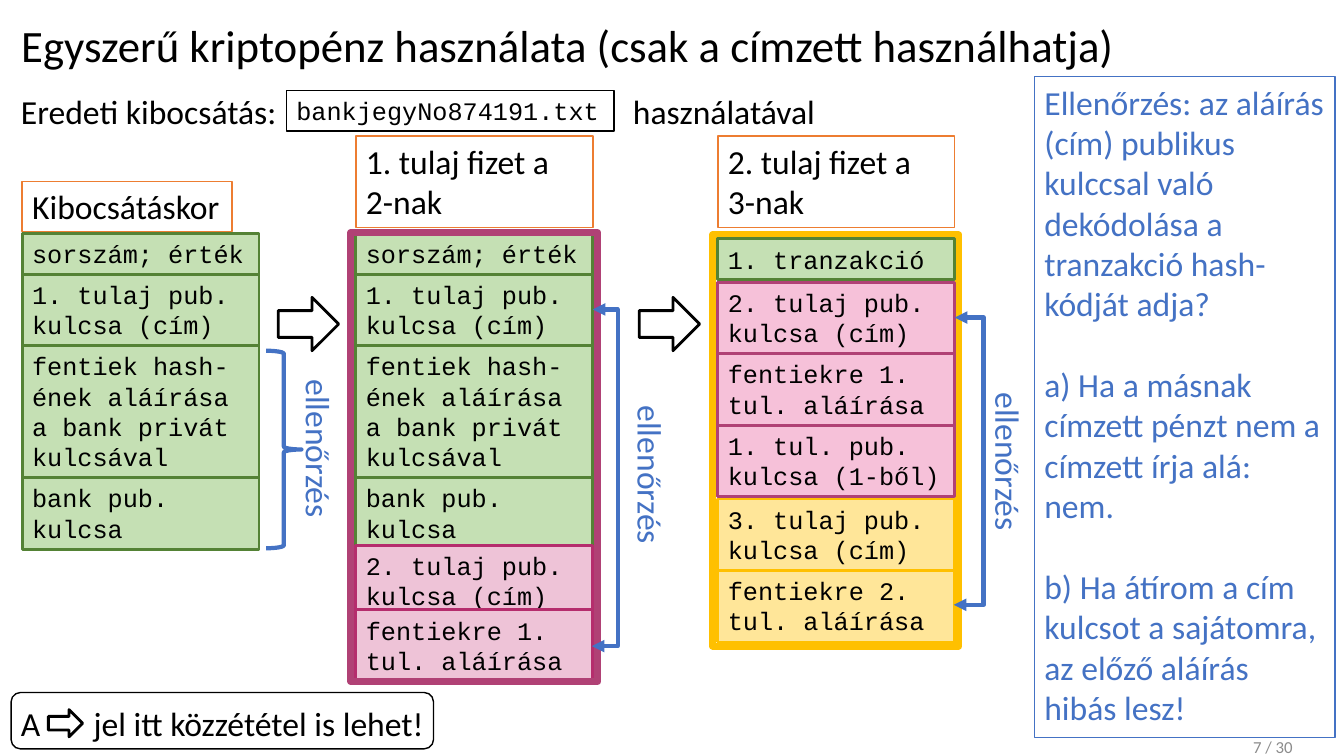
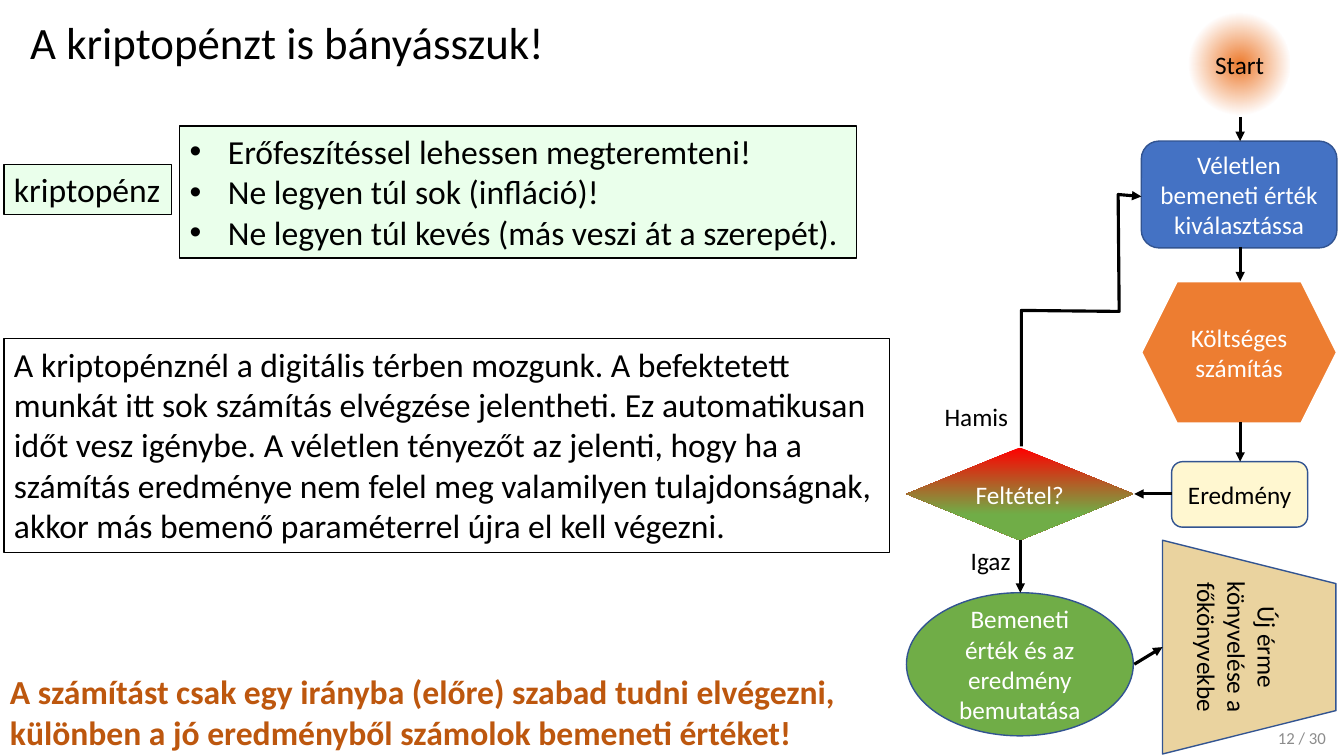
import pptx
import pptx.util
import pptx.dml.color
import pptx.enum.shapes
import pptx.enum.text
import pptx.oxml
import pptx.oxml.ns

Inches = pptx.util.Inches
Pt = pptx.util.Pt
qn = pptx.oxml.ns.qn
SHAPE = pptx.enum.shapes.MSO_SHAPE
CONNECTOR = pptx.enum.shapes.MSO_CONNECTOR
ANCHOR = pptx.enum.text.MSO_ANCHOR
ALIGN = pptx.enum.text.PP_ALIGN

COLORS = {
    "black": "000000", "white": "FFFFFF", "grey": "8C8C8C", "blue": "4472C4",
    "navy": "325491", "orange": "ED7D31", "rust": "BD570E", "red": "FF0000",
    "green": "70AD47", "mint": "BCFFBD", "sand": "D7A841", "cream": "FFF7D0",
    "leaf": "C5E0B4", "leaf_line": "548235", "rose": "EEC3D7", "rose_line": "B52D6D",
    "pink": "F6C1D9", "plum": "B04175", "yellow": "FFE699", "gold": "FFC000",
}


class Deck:
    font, mono = "Calibri", "Courier New"
    title_size, text_size, small_size, page_size = 32, 24, 18, 12

    def __init__(self):
        self.prs = pptx.Presentation()
        self.prs.slide_width, self.prs.slide_height = Inches(13.33), Inches(7.5)

    def slide(self, title, left, top, page, page_left, page_top, layout=5):
        self.s = self.prs.slides.add_slide(self.prs.slide_layouts[layout])
        sp = self.s.shapes.title
        self.place(sp, left, top, 11.98, 0.64)
        self.put_text(sp, [title], size=self.title_size)
        self.text(page_left, page_top, 3, 0.4, page, size=self.page_size, color="grey",
                  align=ALIGN.RIGHT, anchor=ANCHOR.MIDDLE)

    def place(self, sp, x, y, w, h):
        sp.left, sp.top, sp.width, sp.height = map(Inches, (x, y, w, h))

    def color(self, name):
        return pptx.dml.color.RGBColor.from_string(COLORS[name])

    def put_text(self, sp, lines, size=text_size, color="black", font=None, bold=False,
                 align=ALIGN.LEFT, anchor=ANCHOR.TOP, wrap=True, gap=0):
        tf = sp.text_frame
        tf.word_wrap = wrap
        tf.auto_size = pptx.enum.text.MSO_AUTO_SIZE.NONE
        tf.vertical_anchor = anchor
        for i, line in enumerate(lines):
            p = tf.add_paragraph() if i else tf.paragraphs[0]
            p.alignment = align
            p.space_before = Pt(gap if i else 0)
            r = p.add_run()
            r.text = line
            r.font.name = font or self.font
            r.font.size = Pt(size)
            r.font.bold = bold
            r.font.color.rgb = self.color(color)

    def text(self, x, y, w, h, words, rotation=0, **style):
        sp = self.s.shapes.add_textbox(*map(Inches, (x, y, w, h)))
        sp.rotation = rotation
        self.put_text(sp, [words], **style)

    def paint(self, sp, fill=None, line=None, width=1, alpha=None):
        if fill:
            sp.fill.solid()
            sp.fill.fore_color.rgb = self.color(fill)
            if alpha:
                clr = sp._element.spPr.find(qn("a:solidFill"))[0]
                clr.append(clr.makeelement(qn("a:alpha"), {"val": str(alpha * 1000)}))
        else:
            sp.fill.background()
        if line:
            sp.line.color.rgb = self.color(line)
            sp.line.width = Pt(width)
        else:
            sp.line.fill.background()

    def shape(self, kind, x, y, w, h, lines=(), fill=None, line=None, width=1,
              alpha=None, rotation=0, **style):
        sp = self.s.shapes.add_shape(kind, *map(Inches, (x, y, w, h)))
        sp.shadow.inherit = False
        sp.rotation = rotation
        self.paint(sp, fill, line, width, alpha)
        self.put_text(sp, lines, **style)
        return sp

    def box(self, x, y, w, h, *lines, **style):
        return self.shape(SHAPE.RECTANGLE, x, y, w, h, lines, **style)

    def node(self, kind, x, y, w, h, words, **style):
        return self.shape(kind, x, y, w, h, [words], size=self.small_size,
                          align=ALIGN.CENTER, anchor=ANCHOR.MIDDLE, **style)

    def gradient(self, sp, stops, direction):
        gs = "".join(f'<a:gs pos="{pos * 1000}"><a:srgbClr val="{COLORS[name]}"/></a:gs>'
                     for pos, name in stops)
        grad = pptx.oxml.parse_xml(
            f'<a:gradFill {pptx.oxml.ns.nsdecls("a")} rotWithShape="1">'
            f"<a:gsLst>{gs}</a:gsLst>{direction}</a:gradFill>")
        spPr = sp._element.spPr
        spPr.replace(spPr.find(qn("a:noFill")), grad)

    def stack(self, x, y, fill, line, rows, overlap=0):
        for count, words in rows:
            h = round(0.1 + 0.303 * count, 2)
            self.box(x, y, 2.35, h, words, fill=fill, line=line, width=2,
                     size=self.small_size, font=self.mono)
            y += h - overlap

    def bullets(self, x, y, w, h, lines, **look):
        sp = self.s.placeholders[1]
        self.place(sp, x, y, w, h)
        self.paint(sp, **look)
        self.put_text(sp, lines)
        for p in sp.text_frame.paragraphs:
            pPr = p._p.get_or_add_pPr()
            pPr.set("marL", str(Inches(0.38)))
            pPr.set("indent", str(-Inches(0.38)))

    def heads(self, sp, color, width, ends=("tailEnd",)):
        sp.line.color.rgb = self.color(color)
        sp.line.width = Pt(width)
        ln = sp.line._get_or_add_ln()
        for end in ends:
            ln.append(ln.makeelement(qn("a:" + end), {"type": "triangle"}))

    def connector(self, kind, x1, y1, x2, y2, color="black", width=2.25, **ends):
        c = self.s.shapes.add_connector(kind, *map(Inches, (x1, y1, x2, y2)))
        self.heads(c, color, width, **ends)
        spPr = c._element.spPr
        spPr.append(spPr.makeelement(qn("a:effectLst"), {}))
        return c

    def arrow(self, x1, y1, x2, y2):
        self.connector(CONNECTOR.STRAIGHT, x1, y1, x2, y2)

    def check_link(self, x, y1, y2, reach):
        step = 0.01
        c = self.connector(CONNECTOR.ELBOW, x, y1, x - step, y2, "blue", 3,
                           ends=("headEnd", "tailEnd"))
        geom = c._element.spPr.find(qn("a:prstGeom"))
        av = geom.find(qn("a:avLst"))
        if av is None:
            av = geom.makeelement(qn("a:avLst"), {})
            geom.append(av)
        value = round(-reach / step * 100000)
        av.append(av.makeelement(qn("a:gd"), {"name": "adj1", "fmla": f"val {value}"}))

    def bent_arrow(self, points):
        pts = [(Inches(x), Inches(y)) for x, y in points]
        fb = self.s.shapes.build_freeform(*pts[0])
        fb.add_line_segments(pts[1:], close=False)
        sp = fb.convert_to_shape()
        sp.shadow.inherit = False
        sp.fill.background()
        self.heads(sp, "black", 2.25)


def usage_slide(d):
    d.slide("Egyszerű kriptopénz használata (csak a címzett használhatja)", 0.11, 0.13,
            "7 / 30", 9.92, 7.21)
    x1, x2, x3 = 0.22, 3.53, 7.12
    d.text(0.11, 0.85, 2.84, 0.5, "Eredeti kibocsátás:", wrap=False)
    d.box(2.84, 0.9, 3.25, 0.4, "bankjegyNo874191.txt", fill="white", line="black",
          size=d.small_size, font=d.mono, wrap=False)
    d.text(6.18, 0.85, 2.03, 0.5, "használatával", wrap=False)

    d.box(x1, 1.8, 2.08, 0.5, "Kibocsátáskor", fill="white", line="orange", wrap=False)
    for x, words in ((x2, "1. tulaj fizet a 2-nak"), (x3, "2. tulaj fizet a 3-nak")):
        d.box(x, 1.35, 2.35, 0.91, words, fill="white", line="orange")

    issue = [(1, "sorszám; érték"), (2, "1. tulaj pub. kulcsa (cím)"),
             (4, "fentiek hash-ének aláírása a bank privát kulcsával"),
             (2, "bank pub. kulcsa")]
    second_key = (2, "2. tulaj pub. kulcsa (cím)")
    first_signature = (2, "fentiekre 1. tul. aláírása")
    for x in (x1, x2):
        d.stack(x, 2.32, "leaf", "leaf_line", issue)
    d.stack(x2, 5.41, "rose", "rose_line", [second_key, first_signature], overlap=0.07)
    d.box(3.48, 2.31, 2.45, 4.45, line="plum", width=5)

    d.box(7.07, 2.33, 2.44, 4.08, line="gold", width=5)
    d.stack(x3, 2.37, "leaf", "leaf_line", [(1, "1. tranzakció")])
    d.stack(x3, 2.8, "pink", "plum",
            [second_key, first_signature, (2, "1. tul. pub. kulcsa (1-ből)")])
    d.stack(x3, 4.95, "yellow", "gold",
            [(2, "3. tulaj pub. kulcsa (cím)"), (2, "fentiekre 2. tul. aláírása")])

    for x in (2.76, 6.34):
        d.shape(SHAPE.RIGHT_ARROW, x, 2.95, 0.6, 0.53, line="black", width=2)
    d.shape(SHAPE.RIGHT_BRACE, 2.64, 3.48, 0.35, 1.96, line="blue", width=3)
    d.check_link(5.88, 3.07, 6.41, 0.25)
    d.check_link(9.47, 3.15, 6, 0.29)
    for x, y in ((2.37, 4.21), (5.66, 4.47), (9.21, 4.34)):
        d.text(x, y, 1.59, 0.5, "ellenőrzés", rotation=90, color="blue", wrap=False)

    d.box(10.26, 0.76, 2.98, 6.56,
          "Ellenőrzés: az aláírás (cím) publikus kulccsal való dekódolása a tranzakció "
          "hash-kódját adja?",
          "a) Ha a másnak címzett pénzt nem a címzett írja alá: nem.",
          "b) Ha átírom a cím kulcsot a sajátomra, az előző aláírás hibás lesz!",
          line="blue", color="blue", gap=29)

    d.text(0.11, 6.92, 0.4, 0.5, "A", wrap=False)
    d.shape(SHAPE.RIGHT_ARROW, 0.48, 7.04, 0.34, 0.27, line="black", width=2)
    d.text(0.83, 6.92, 3.52, 0.5, "jel itt közzététel is lehet!", wrap=False)
    d.shape(SHAPE.ROUNDED_RECTANGLE, 0.11, 6.87, 4.19, 0.56, line="black")


def mining_slide(d):
    d.slide("A kriptopénzt is bányásszuk!", 0.2, 0.1, "12 / 30", 10.25, 7.12, layout=1)
    note = dict(fill="mint", alpha=30, line="black", width=0.75)
    d.bullets(1.78, 1.25, 6.72, 1.31,
              ["Erőfeszítéssel lehessen megteremteni!", "Ne legyen túl sok (infláció)!",
               "Ne legyen túl kevés (más veszi át a szerepét)."], **note)
    d.box(0.04, 1.63, 1.66, 0.5, "kriptopénz", wrap=False, **note)
    d.box(0.04, 3.36, 8.78, 2.12,
          "A kriptopénznél a digitális térben mozgunk. A befektetett munkát itt sok "
          "számítás elvégzése jelentheti. Ez automatikusan időt vesz igénybe. A véletlen "
          "tényezőt az jelenti, hogy ha a számítás eredménye nem felel meg valamilyen "
          "tulajdonságnak, akkor más bemenő paraméterrel újra el kell végezni.",
          fill="white", line="black")
    d.text(0, 6.61, 8.49, 0.91,
           "A számítást csak egy irányba (előre) szabad tudni elvégezni, különben a jó "
           "eredményből számolok bemeneti értéket!", color="rust", bold=True)

    start = d.node(SHAPE.OVAL, 11.79, 0.12, 1.01, 1.03, "Start")
    d.gradient(start, [(0, "orange"), (1, "orange"), (71, "white"), (100, "white")],
               '<a:path path="circle"><a:fillToRect l="50000" t="50000" r="50000" '
               'b="50000"/></a:path>')
    d.node(SHAPE.ROUNDED_RECTANGLE, 11.32, 1.4, 1.94, 1.06,
           "Véletlen bemeneti érték kiválasztássa", fill="blue", line="navy", color="white")
    d.node(SHAPE.HEXAGON, 11.32, 2.79, 1.94, 1.41, "Költséges számítás",
           fill="orange", line="white", width=1.5, color="white")
    d.node(SHAPE.ROUNDED_RECTANGLE, 11.62, 4.58, 1.35, 0.65, "Eredmény",
           fill="cream", line="navy")
    test = d.node(SHAPE.FLOWCHART_DECISION, 8.99, 4.44, 2.25, 0.92, "Feltétel?",
                  color="white")
    d.gradient(test, [(0, "red"), (72, "green"), (100, "green")],
               '<a:lin ang="5400000" scaled="0"/>')
    d.node(SHAPE.OVAL, 8.99, 5.88, 2.25, 1.42, "Bemeneti érték és az eredmény bemutatása",
           fill="green", line="navy", color="white")
    d.node(SHAPE.TRAPEZOID, 11.33, 5.56, 2.12, 1.72, "Új érme könyvelése a főkönyvekbe",
           fill="sand", alpha=50, line="navy", rotation=90)

    for y1, y2 in ((1.16, 1.4), (2.45, 2.79), (4.19, 4.58)):
        d.arrow(12.3, y1, 12.3, y2)
    d.arrow(11.62, 4.9, 11.25, 4.9)
    d.arrow(10.12, 5.36, 10.12, 5.88)
    d.arrow(11.25, 6.59, 11.53, 6.42)
    d.bent_arrow([(10.13, 4.43), (10.13, 3.08), (11.1, 3.09), (11.09, 1.93), (11.32, 1.95)])
    d.text(9.27, 3.93, 0.84, 0.4, "Hamis", size=d.small_size, wrap=False)
    d.text(9.53, 5.36, 0.6, 0.4, "Igaz", size=d.small_size, wrap=False)


def main():
    d = Deck()
    usage_slide(d)
    mining_slide(d)
    d.prs.save("out.pptx")


if __name__ == "__main__":
    main()
